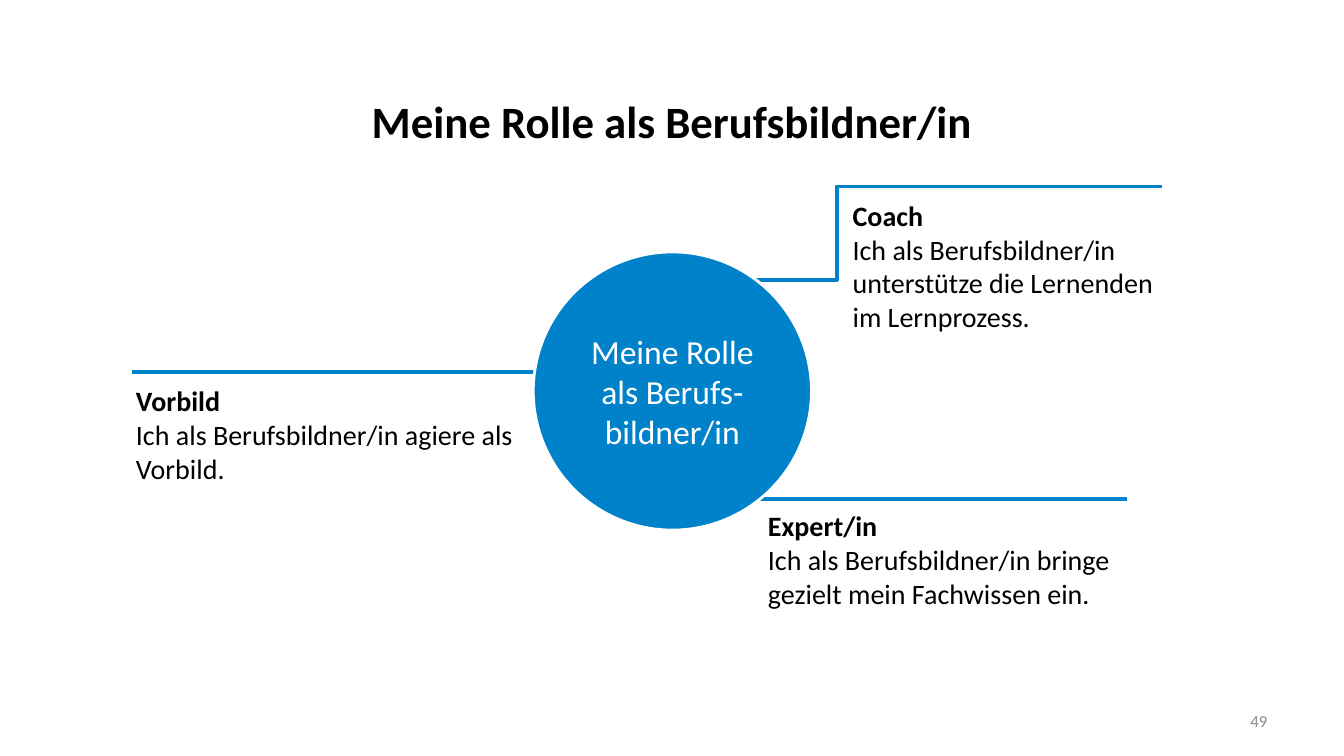
"""Build the slide on the three roles of a vocational trainer."""
from dataclasses import dataclass

from lxml import etree
from pptx import Presentation
from pptx import util as u
from pptx.dml.color import RGBColor
from pptx.enum import shapes, text
from pptx.oxml import ns

HUES = {"blue": "0082CA", "black": "000000", "white": "FFFFFF", "grey": "8C8C8C"}
FONT = "Calibri"
WIDE, HIGH = u.Inches(13.333), u.Inches(7.5)
LEFT, MID, RIGHT = text.PP_ALIGN.LEFT, text.PP_ALIGN.CENTER, text.PP_ALIGN.RIGHT
STRAIGHT, BENT = shapes.MSO_CONNECTOR.STRAIGHT, shapes.MSO_CONNECTOR.ELBOW


@dataclass(frozen=True)
class Area:
    """Hold a box in percent of the slide's size."""
    left: float
    top: float
    width: float
    height: float

    def place(self) -> tuple[int, int, int, int]:
        """Return the box as lengths."""
        return across(self.left), down(self.top), across(self.width), down(self.height)


@dataclass(frozen=True)
class Role:
    """Hold a role's name, its message, its area and its fill."""
    name: str
    words: str
    area: Area
    fill: str = ""


@dataclass(frozen=True)
class Rule:
    """Hold a line's two ends in percent of the slide's size."""
    left: float
    top: float
    right: float
    base: float
    kind: int = STRAIGHT


ROLES = [
    Role("Expert/in", "Ich als Berufsbildner/in bringe gezielt mein Fachwissen ein.",
         Area(56.4, 66.67, 27.45, 23.33)),
    Role("Coach", "Ich als Berufsbildner/in unterstütze die Lernenden im Lernprozess.",
         Area(62.7, 25.6, 24.9, 33.87)),
    Role("Vorbild", "Ich als Berufsbildner/in agiere als Vorbild.",
         Area(9.38, 50.13, 30.45, 36.8), "white"),
]
RULES = [
    Rule(9.82, 49.2, 42.08, 49.2),
    Rule(55.2, 66, 83.85, 66),
    Rule(73.05, 24.67, 51.45, 37.07, BENT),
]
COACH = Rule(65.55, 24.67, 86.48, 24.67)
TITLE = Area(5, 11.2, 90, 9.47)
PAGE = Area(71.7, 92.67, 23.33, 5.33)
HUB = Area(39.68, 33.33, 20.7, 36.8)


def across(share: float) -> int:
    """Turn a percentage of the width into a length."""
    return round(WIDE * share / 100)


def down(share: float) -> int:
    """Turn a percentage of the height into a length."""
    return round(HIGH * share / 100)


def hue(name: str) -> RGBColor:
    """Look up a colour."""
    return RGBColor.from_string(HUES[name])


def write(para, words: str, size: float, tint: str = "black",
          bold: bool = False, align: int = LEFT) -> None:
    """Add one run to a paragraph."""
    para.alignment = align
    run = para.add_run()
    run.text = words
    run.font.name = FONT
    run.font.size = u.Pt(size)
    run.font.bold = bold
    run.font.color.rgb = hue(tint)


def add_box(slide, area: Area, middle: bool = False):
    """Add a wrapping text box and return its frame."""
    frame = slide.shapes.add_textbox(*area.place()).text_frame
    frame.word_wrap = True
    frame.vertical_anchor = text.MSO_ANCHOR.MIDDLE if middle else text.MSO_ANCHOR.TOP
    return frame


def add_form(slide, kind: int, area: Area, fill: str):
    """Add a filled shape without shadow or outline."""
    form = slide.shapes.add_shape(kind, *area.place())
    form.shadow.inherit = False
    form.fill.solid()
    form.fill.fore_color.rgb = hue(fill)
    form.line.fill.background()
    form.text_frame.word_wrap = True
    return form


def add_role(slide, role: Role) -> None:
    """Add a role's name with its message below."""
    if role.fill:
        frame = add_form(slide, shapes.MSO_SHAPE.RECTANGLE, role.area, role.fill).text_frame
        frame.vertical_anchor = text.MSO_ANCHOR.TOP
    else:
        frame = add_box(slide, role.area)
    write(frame.paragraphs[0], role.name, 20, bold=True)
    write(frame.add_paragraph(), role.words, 20)


def add_rule(slide, rule: Rule) -> None:
    """Add a blue line."""
    line = slide.shapes.add_connector(rule.kind, across(rule.left), down(rule.top),
                                      across(rule.right), down(rule.base))
    line.line.color.rgb = hue("blue")
    line.line.width = u.Pt(2.75)
    etree.SubElement(line._element.spPr, ns.qn("a:effectLst"))


def add_hub(slide) -> None:
    """Add the circle in the centre."""
    hub = add_form(slide, shapes.MSO_SHAPE.OVAL, HUB, "blue")
    hub.line.color.rgb = hue("white")
    hub.line.width = u.Pt(2)
    frame = hub.text_frame
    frame.vertical_anchor = text.MSO_ANCHOR.MIDDLE
    frame.margin_left = frame.margin_right = frame.margin_top = frame.margin_bottom = 0
    write(frame.paragraphs[0], "Meine Rolle als Berufs-bildner/in", 24, "white", align=MID)


def main() -> None:
    """Draw the slide and save it."""
    deck = Presentation()
    deck.slide_width, deck.slide_height = WIDE, HIGH
    slide = deck.slides.add_slide(deck.slide_layouts[6])
    write(add_box(slide, TITLE, True).paragraphs[0],
          "Meine Rolle als Berufsbildner/in", 32, bold=True, align=MID)
    write(add_box(slide, PAGE, True).paragraphs[0], "49", 12, "grey", align=RIGHT)
    for role in ROLES:
        add_role(slide, role)
    for rule in RULES:
        add_rule(slide, rule)
    add_hub(slide)
    add_rule(slide, COACH)
    deck.save("out.pptx")


if __name__ == "__main__":
    main()
